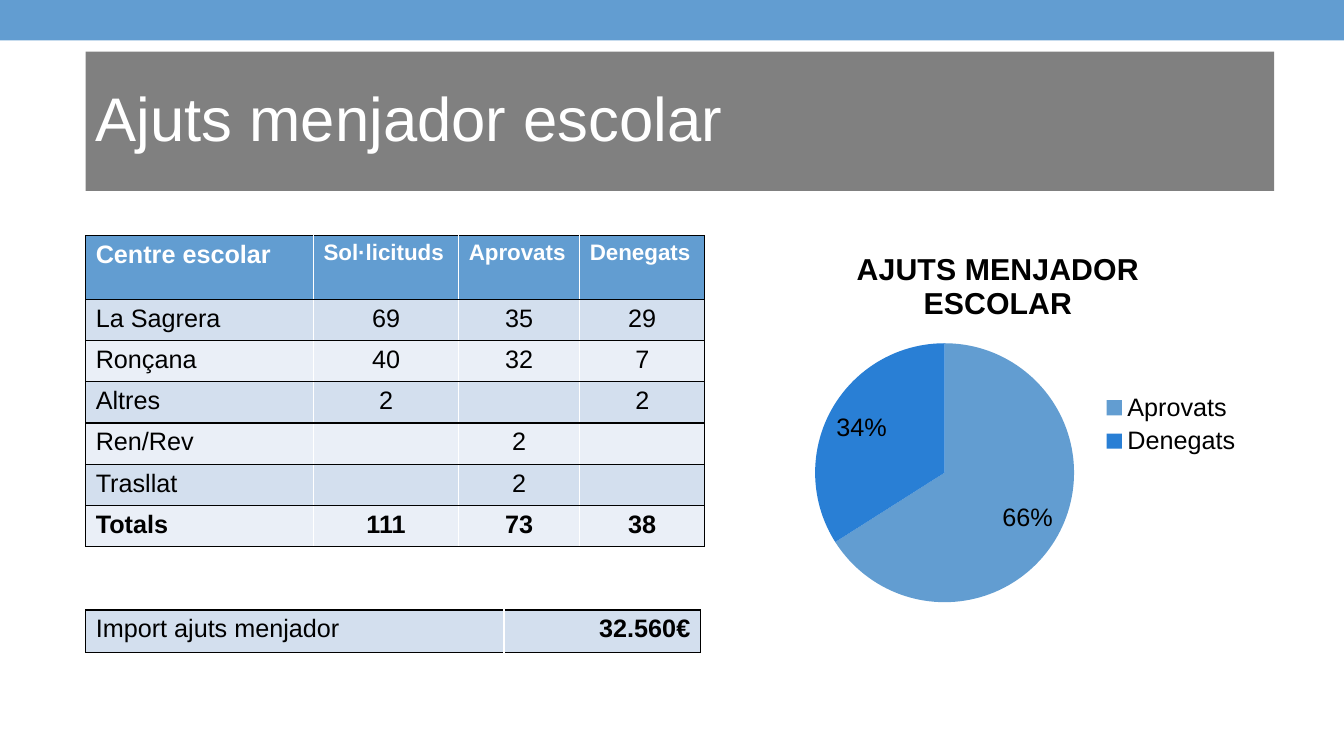
from dataclasses import dataclass

from pptx import Presentation
from pptx.chart.data import CategoryChartData
from pptx.dml.color import RGBColor
from pptx.enum.chart import XL_CHART_TYPE as CT, XL_LABEL_POSITION as LP, XL_LEGEND_POSITION as LG
from pptx.enum.shapes import MSO_SHAPE as SHAPE
from pptx.enum.text import MSO_ANCHOR as ANCHOR, MSO_AUTO_SIZE as AUTO, PP_ALIGN as AL
from pptx.oxml import parse_xml
from pptx.oxml.ns import nsdecls
from pptx.util import Cm, Pt

BLUE, DARK_BLUE, GREY = "629DD1", "297FD5", "808080"
BAND, LIGHT = "D3DFEE", "EAEFF7"
BLACK, WHITE = "000000", "FFFFFF"
LEFT = 2.16


@dataclass
class Cell:
    text: str
    fill: str
    align: AL = AL.LEFT
    size: int = 18
    color: str = BLACK
    bold: bool = False


@dataclass
class Grid:
    top: float
    cols: list[float]
    rows: list[float]
    cells: list[list[Cell]]


def rgb(value: str) -> RGBColor:
    return RGBColor.from_string(value)


def set_font(font, size: float, color: str = BLACK, bold: bool = False) -> None:
    for name, value in {"name": "Arial", "size": Pt(size), "bold": bold}.items():
        setattr(font, name, value)
    font.color.rgb = rgb(color)


def set_fill(target, color: str) -> None:
    target.fill.solid()
    target.fill.fore_color.rgb = rgb(color)


def set_borders(cell, first: bool, last: bool) -> None:
    sides = {"L": BLACK if first else WHITE, "R": BLACK if last else WHITE, "T": BLACK, "B": BLACK}
    tc_pr = cell._tc.get_or_add_tcPr()
    for side, color in sides.items():
        tc_pr.append(parse_xml(
            f'<a:ln{side} {nsdecls("a")} w="12700"><a:solidFill><a:srgbClr val="{color}"/>'
            f'</a:solidFill></a:ln{side}>'))


def draw_grid(s, grid: Grid) -> None:
    table = s.shapes.add_table(
        len(grid.rows), len(grid.cols), Cm(LEFT), Cm(grid.top),
        Cm(sum(grid.cols)), Cm(sum(grid.rows))).table
    for col, width in zip(table.columns, grid.cols):
        col.width = Cm(width)
    for row, height in zip(table.rows, grid.rows):
        row.height = Cm(height)
    for i, items in enumerate(grid.cells):
        for j, item in enumerate(items):
            cell = table.cell(i, j)
            set_borders(cell, j == 0, j == len(items) - 1)
            set_fill(cell, item.fill)
            p = cell.text_frame.paragraphs[0]
            p.alignment = item.align
            set_font(p.font, item.size, item.color, item.bold)
            if item.text:
                r = p.add_run()
                r.text = item.text
                set_font(r.font, item.size, item.color, item.bold)


def draw_title(s, text: str) -> None:
    sp = s.shapes.title
    box = {"left": LEFT, "top": 1.3, "width": 29.95, "height": 3.51}
    for name, value in box.items():
        setattr(sp, name, Cm(value))
    set_fill(sp, GREY)
    tf = sp.text_frame
    for name, value in {"text": text, "word_wrap": True, "auto_size": AUTO.NONE,
                        "vertical_anchor": ANCHOR.MIDDLE}.items():
        setattr(tf, name, value)
    p = tf.paragraphs[0]
    p.alignment, p.line_spacing = AL.LEFT, 0.9
    set_font(p.runs[0].font, 44, WHITE)


def draw_pie(s) -> None:
    data = CategoryChartData()
    data.categories = ["Aprovats", "Denegats"]
    data.add_series("Series 1", (66, 34))
    chart = s.shapes.add_chart(CT.PIE, Cm(18.75), Cm(5.82), Cm(12.8), Cm(9.75), data).chart
    set_font(chart.font, 18)
    chart.has_title = True
    tf = chart.chart_title.text_frame
    tf.text = "AJUTS MENJADOR ESCOLAR"
    set_font(tf.paragraphs[0].runs[0].font, 21.6, bold=True)
    chart.chart_title.include_in_layout = False
    chart.has_legend = True
    chart.legend.position = LG.RIGHT
    chart.legend.include_in_layout = False
    plot = chart.plots[0]
    plot.vary_by_categories = True
    plot.has_data_labels = True
    labels = plot.data_labels
    for name, value in {"show_percentage": True, "show_value": False, "number_format": "0%",
                        "number_format_is_linked": False, "position": LP.INSIDE_END}.items():
        setattr(labels, name, value)
    set_font(labels.font, 18)
    for i, color in enumerate((BLUE, DARK_BLUE)):
        set_fill(plot.series[0].points[i].format, color)
    area = chart.element.xpath("c:chart/c:plotArea")[0]
    for old in area.xpath("c:layout"):
        area.remove(old)
    sizes = "".join(f'<c:{k} val="{v}"/>' for k, v in
                    {"x": 0.14, "y": 0.29, "w": 0.51, "h": 0.67}.items())
    area.insert(0, parse_xml(
        f'<c:layout {nsdecls("c")}><c:manualLayout><c:layoutTarget val="inner"/>'
        f'<c:xMode val="edge"/><c:yMode val="edge"/>{sizes}</c:manualLayout></c:layout>'))


def school_grid() -> Grid:
    header = ["Centre escolar", "Sol·licituds", "Aprovats", "Denegats"]
    rows = [
        ["La Sagrera", "69", "35", "29"],
        ["Ronçana", "40", "32", "7"],
        ["Altres", "2", "", "2"],
        ["Ren/Rev", "", "2", ""],
        ["Trasllat", "", "2", ""],
        ["Totals", "111", "73", "38"],
    ]
    cells = [[Cell(text, BLUE, size=16 if j else 18, color=WHITE, bold=True)
              for j, text in enumerate(header)]]
    for i, row in enumerate(rows):
        cells.append([Cell(text, LIGHT if i % 2 else BAND, AL.CENTER if j else AL.LEFT,
                           bold=row[0] == "Totals") for j, text in enumerate(row)])
    return Grid(5.94, [5.74, 3.66, 3.05, 3.15], [1.6] + [1.04] * len(rows), cells)


def main() -> None:
    prs = Presentation()
    prs.slide_width, prs.slide_height = Cm(33.87), Cm(19.05)
    s = prs.slides.add_slide(prs.slide_layouts[5])
    bar = s.shapes.add_shape(SHAPE.RECTANGLE, 0, 0, prs.slide_width, Cm(1.02))
    bar.shadow.inherit = False
    set_fill(bar, BLUE)
    bar.line.fill.background()
    draw_title(s, "Ajuts menjador escolar")
    draw_grid(s, school_grid())
    draw_pie(s)
    draw_grid(s, Grid(15.37, [10.54, 4.95], [1.07], [[
        Cell("Import ajuts menjador", BAND), Cell("32.560€", BAND, AL.RIGHT, bold=True)]]))
    prs.save("out.pptx")


if __name__ == "__main__":
    main()
